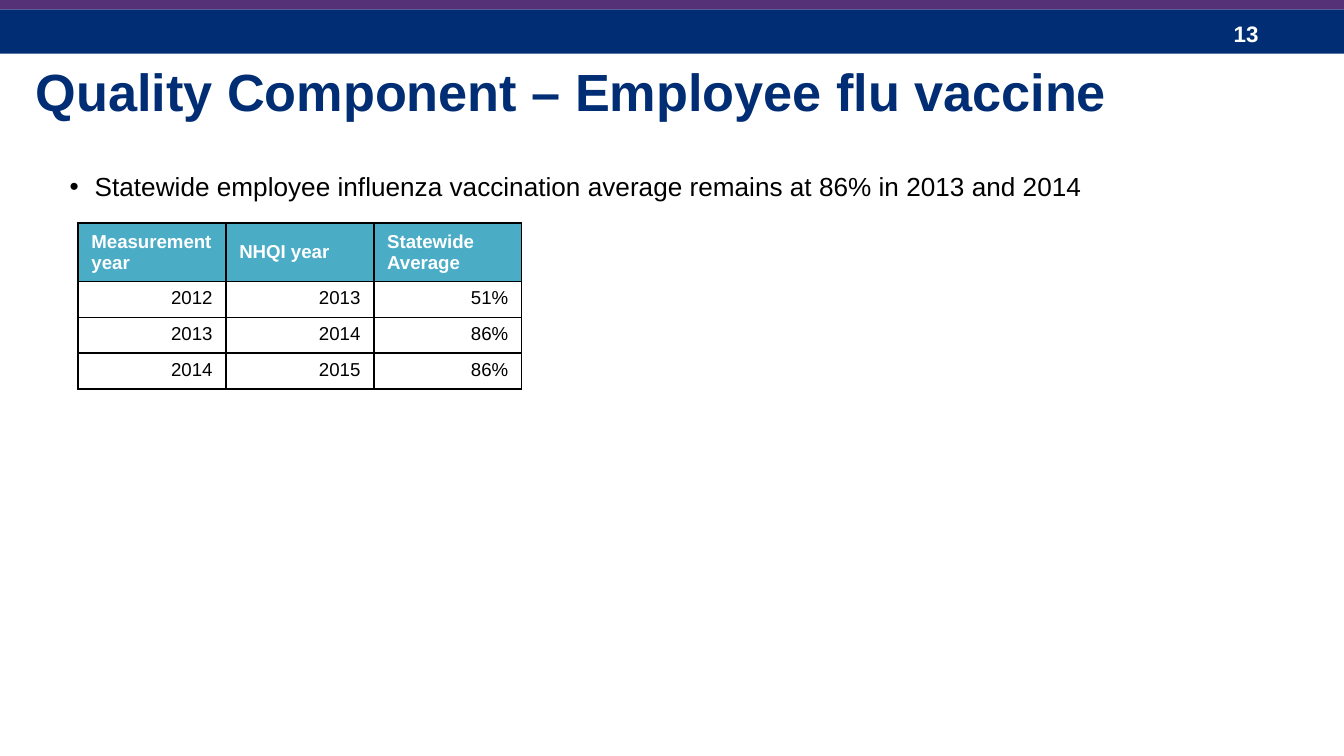
from lxml.etree import SubElement
from pptx import Presentation
from pptx.dml.color import RGBColor
from pptx.enum.shapes import MSO_SHAPE
from pptx.enum.text import MSO_ANCHOR, PP_ALIGN
from pptx.oxml.ns import qn
from pptx.util import Pt

COLORS = {"navy": "002D73", "purple": "553278", "teal": "4BACC6",
          "white": "FFFFFF", "black": "000000"}

BANDS = [("navy", (0, 5, 720, 23.8)), ("purple", (0, -1.4, 720, 6.4))]
TEXTS = {
    "number": {"text": "13", "box": (653.8, 7.2, 54, 21.6), "anchor": MSO_ANCHOR.MIDDLE,
               "font": {"size": Pt(12), "bold": True}, "color": "white"},
    "title": {"text": "Quality Component – Employee flu vaccine",
              "box": (12.2, 28.1, 684, 41), "anchor": MSO_ANCHOR.BOTTOM,
              "font": {"size": Pt(28), "bold": True}, "color": "navy"},
    "finding": {"text": "Statewide employee influenza vaccination average "
                        "remains at 86% in 2013 and 2014",
                "box": (30.2, 70.6, 648, 41), "anchor": MSO_ANCHOR.BOTTOM,
                "font": {"size": Pt(14), "bold": False}, "color": "black", "bullet": True},
}
VACCINATION_ROWS = [
    ("Measurement year", "NHQI year", "Statewide Average"),
    ("2012", "2013", "51%"),
    ("2013", "2014", "86%"),
    ("2014", "2015", "86%"),
]
TABLE_LEFT, TABLE_TOP = 41.8, 119.5
COLUMN_WIDTH, HEADER_HEIGHT, ROW_HEIGHT = 79.2, 31.2, 19.2
BULLET_INDENT = 13.5


def color(name):
    return RGBColor.from_string(COLORS[name])


def set_font(paragraph, color_name, formats):
    for name, value in {"name": "Arial", **formats}.items():
        setattr(paragraph.font, name, value)
    paragraph.font.color.rgb = color(color_name)


def add_band(slide, color_name, box):
    shape = slide.shapes.add_shape(MSO_SHAPE.RECTANGLE, *map(Pt, box))
    shape.shadow.inherit = False
    shape.fill.solid()
    shape.fill.fore_color.rgb = color(color_name)
    shape.line.fill.background()


def add_bullet(paragraph):
    properties = paragraph._p.get_or_add_pPr()
    properties.set("marL", str(Pt(BULLET_INDENT)))
    properties.set("indent", str(-Pt(BULLET_INDENT)))
    SubElement(properties, qn("a:buFont"), typeface="Arial")
    SubElement(properties, qn("a:buChar"), char="•")


def add_text(slide, item):
    frame = slide.shapes.add_textbox(*map(Pt, item["box"])).text_frame
    frame.word_wrap = True
    frame.vertical_anchor = item["anchor"]
    paragraph = frame.paragraphs[0]
    paragraph.text = item["text"]
    if item.get("bullet"):
        add_bullet(paragraph)
    set_font(paragraph, item["color"], item["font"])


def add_borders(cell):
    """Draw all four sides; call before filling, as lines precede the fill."""
    properties = cell._tc.get_or_add_tcPr()
    for side in ("lnL", "lnR", "lnT", "lnB"):
        line = SubElement(properties, qn(f"a:{side}"), w=str(Pt(1)))
        fill = SubElement(line, qn("a:solidFill"))
        SubElement(fill, qn("a:srgbClr"), val=COLORS["black"])


def add_vaccination_table(slide):
    heights = [HEADER_HEIGHT] + [ROW_HEIGHT] * (len(VACCINATION_ROWS) - 1)
    column_count = len(VACCINATION_ROWS[0])
    table = slide.shapes.add_table(
        len(heights), column_count, Pt(TABLE_LEFT), Pt(TABLE_TOP),
        Pt(COLUMN_WIDTH * column_count), Pt(sum(heights))).table
    for column in table.columns:
        column.width = Pt(COLUMN_WIDTH)
    for row_index, values in enumerate(VACCINATION_ROWS):
        table.rows[row_index].height = Pt(heights[row_index])
        is_header = row_index == 0
        for column_index, value in enumerate(values):
            cell = table.cell(row_index, column_index)
            add_borders(cell)
            cell.fill.solid()
            cell.fill.fore_color.rgb = color("teal" if is_header else "white")
            cell.vertical_anchor = MSO_ANCHOR.MIDDLE if is_header else MSO_ANCHOR.TOP
            cell.text = value
            paragraph = cell.text_frame.paragraphs[0]
            paragraph.alignment = PP_ALIGN.LEFT if is_header else PP_ALIGN.RIGHT
            set_font(paragraph, "white" if is_header else "black",
                     {"size": Pt(10), "bold": is_header})


def main():
    presentation = Presentation()
    presentation.slide_width, presentation.slide_height = Pt(720), Pt(405)
    slide = presentation.slides.add_slide(presentation.slide_layouts[6])
    for color_name, box in BANDS:
        add_band(slide, color_name, box)
    for item in TEXTS.values():
        add_text(slide, item)
    add_vaccination_table(slide)
    presentation.save("out.pptx")


if __name__ == "__main__":
    main()
